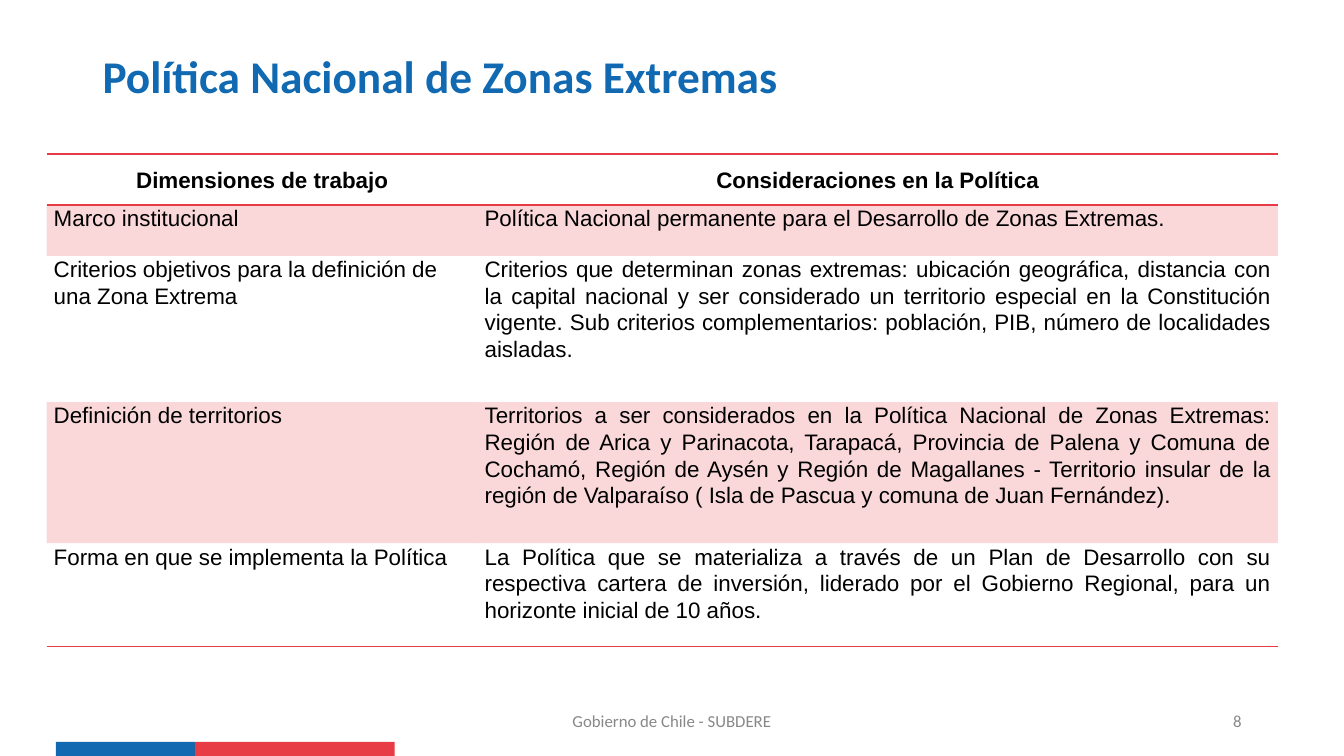
from dataclasses import dataclass

import lxml.etree
import pptx
import pptx.dml.color
import pptx.enum.shapes
import pptx.enum.text
import pptx.oxml.ns
import pptx.util

Pt = pptx.util.Pt
qn = pptx.oxml.ns.qn
Align = pptx.enum.text.PP_ALIGN
Anchor = pptx.enum.text.MSO_ANCHOR


@dataclass(frozen=True)
class Theme:
    blue: str = "1069B1"
    red: str = "E73C46"
    grey: str = "888888"
    black: str = "000000"
    heading_font: str = "Calibri"
    table_font: str = "Arial"
    title_size: float = 32.4
    table_size: float = 16
    footer_size: float = 12
    band_opacity: int = 20


THEME = Theme()

HEADER = ("Dimensiones de trabajo", "Consideraciones en la Política")
DIMENSIONS = [
    ("Marco institucional",
     "Política Nacional permanente para el Desarrollo de Zonas Extremas. "),
    ("Criterios objetivos para la definición de una Zona Extrema",
     "Criterios que determinan zonas extremas: ubicación geográfica, distancia con la "
     "capital nacional y ser considerado un territorio especial en la Constitución vigente. "
     "Sub criterios complementarios: población, PIB, número de localidades aisladas."),
    ("Definición de territorios",
     "Territorios a ser considerados en la Política Nacional de Zonas Extremas: Región de "
     "Arica y Parinacota, Tarapacá, Provincia de Palena y Comuna de Cochamó, Región de Aysén "
     "y Región de Magallanes - Territorio insular de la región de Valparaíso ( Isla de Pascua "
     "y comuna de Juan Fernández)."),
    ("Forma en que se implementa la Política",
     "La Política que se materializa a través de un Plan de Desarrollo con su respectiva "
     "cartera de inversión, liderado por el Gobierno Regional, para un horizonte inicial "
     "de 10 años. "),
]
ROW_HEIGHTS = (36.4, 36.4, 104.4, 100.8, 74)
DIMENSION_SHARE = 0.35


def rgb(color):
    return pptx.dml.color.RGBColor.from_string(color)


def write(frame, text, font, size, color, align, bold=False, spacing=None):
    """Fill a text frame with one formatted paragraph."""
    frame.text = text
    paragraph = frame.paragraphs[0]
    paragraph.alignment = align
    if spacing:
        paragraph.line_spacing = spacing
    for run in paragraph.runs:
        run.font.name = font
        run.font.size = Pt(size)
        run.font.bold = bold
        run.font.color.rgb = rgb(color)


def add_label(slide, box, text, size, color, align, **style):
    frame = slide.shapes.add_textbox(*map(Pt, box)).text_frame
    frame.word_wrap = True
    frame.vertical_anchor = Anchor.MIDDLE
    write(frame, text, THEME.heading_font, size, color, align, **style)


def set_borders(cell, ruled_sides):
    """Draw a red rule on the given sides and clear the others."""
    properties = cell._tc.get_or_add_tcPr()
    for position, side in enumerate("LRTB"):
        line = lxml.etree.Element(qn(f"a:ln{side}"), w=str(Pt(1)))
        if side in ruled_sides:
            fill = lxml.etree.SubElement(line, qn("a:solidFill"))
            lxml.etree.SubElement(fill, qn("a:srgbClr"), val=THEME.red)
        else:
            lxml.etree.SubElement(line, qn("a:noFill"))
        properties.insert(position, line)


def fill_cell(cell, banded):
    if not banded:
        cell.fill.background()
        return
    cell.fill.solid()
    cell.fill.fore_color.rgb = rgb(THEME.red)
    color = cell._tc.tcPr.find(".//" + qn("a:srgbClr"))
    lxml.etree.SubElement(color, qn("a:alpha"), val=str(THEME.band_opacity * 1000))


def add_dimensions_table(slide, box):
    rows = [HEADER, *DIMENSIONS]
    table = slide.shapes.add_table(len(rows), len(HEADER), *map(Pt, box)).table
    table.first_row = table.horz_banding = False
    width = box[2]
    table.columns[0].width = Pt(width * DIMENSION_SHARE)
    table.columns[1].width = Pt(width * (1 - DIMENSION_SHARE))

    for r, (texts, height) in enumerate(zip(rows, ROW_HEIGHTS)):
        table.rows[r].height = Pt(height)
        is_header = r == 0
        ruled_sides = "TB" if is_header else "B" if r == len(rows) - 1 else ""
        if r == 1:
            ruled_sides = "T"
        aligns = (Align.CENTER,) * 2 if is_header else (Align.LEFT, Align.JUSTIFY)
        for c, (text, align) in enumerate(zip(texts, aligns)):
            cell = table.cell(r, c)
            cell.margin_left = cell.margin_right = Pt(5)
            cell.margin_top = cell.margin_bottom = 0
            cell.vertical_anchor = Anchor.MIDDLE if is_header else Anchor.TOP
            write(cell.text_frame, text, THEME.table_font, THEME.table_size,
                  THEME.black, align, bold=is_header, spacing=1.07)
            fill_cell(cell, banded=r % 2 == 1)
            set_borders(cell, ruled_sides)


def add_flag_strip(slide, box):
    left, top, width, height = box
    blue_width = width * 0.41
    for x, part_width, color in ((left, blue_width, THEME.blue),
                                 (left + blue_width, width - blue_width, THEME.red)):
        stripe = slide.shapes.add_shape(pptx.enum.shapes.MSO_SHAPE.RECTANGLE,
                                        Pt(x), Pt(top), Pt(part_width), Pt(height))
        stripe.shadow.inherit = False
        stripe.fill.solid()
        stripe.fill.fore_color.rgb = rgb(color)
        stripe.line.fill.background()


def add_footer(slide, box):
    left, top, width, height = box
    number_width = 216
    add_label(slide, (left, top, 324, height), "Gobierno de Chile - SUBDERE",
              THEME.footer_size, THEME.grey, Align.CENTER)
    add_label(slide, (left + width - number_width, top, number_width, height), "8",
              THEME.footer_size, THEME.grey, Align.RIGHT)


def main():
    deck = pptx.Presentation()
    deck.slide_width, deck.slide_height = Pt(960), Pt(540)
    slide = deck.slides.add_slide(deck.slide_layouts[6])
    add_flag_strip(slide, (40, 530, 242, 10))
    add_footer(slide, (318, 500.4, 576, 28.8))
    add_label(slide, (66.2, 34.6, 828, 44), "Política Nacional de Zonas Extremas",
              THEME.title_size, THEME.blue, Align.LEFT, bold=True, spacing=0.9)
    add_dimensions_table(slide, (33.4, 110, 879.4, sum(ROW_HEIGHTS)))
    deck.save("out.pptx")


if __name__ == "__main__":
    main()
